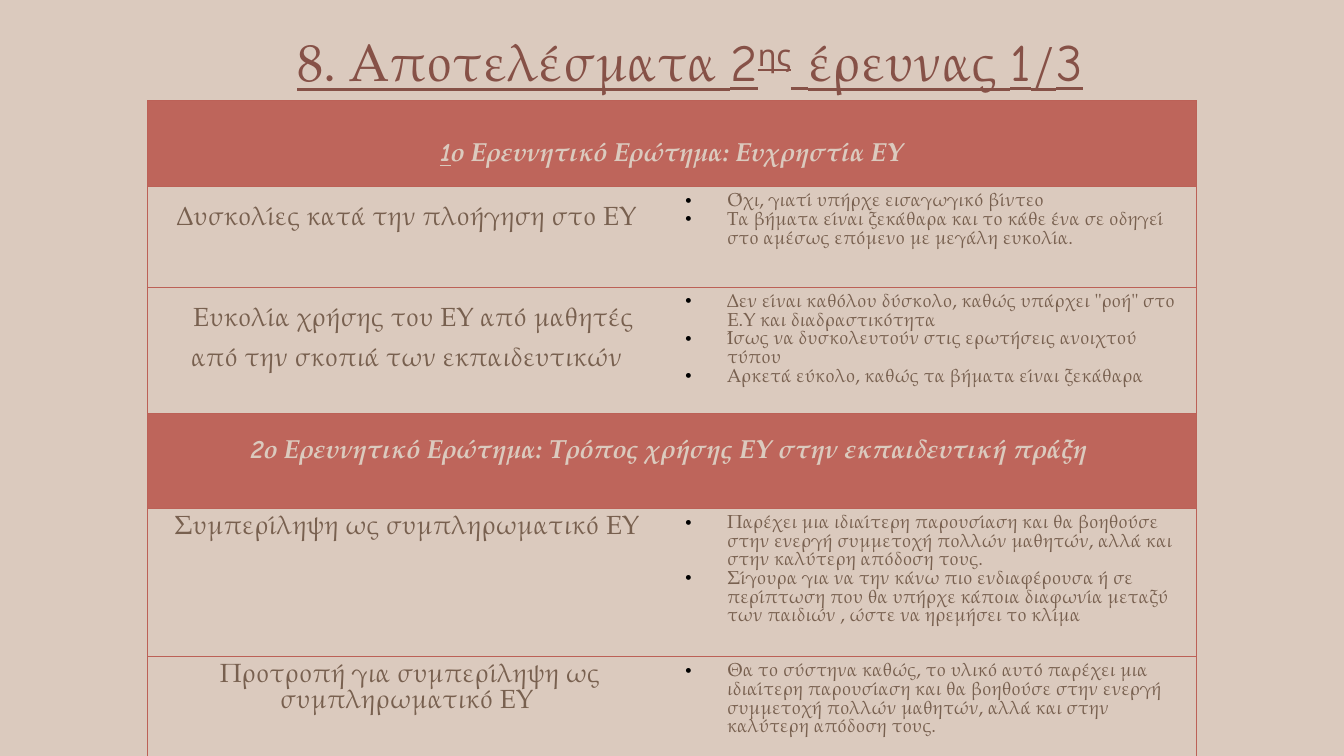
from lxml import etree
from pptx import Presentation
from pptx.dml.color import RGBColor
from pptx.enum import text
from pptx.oxml.ns import qn
from pptx.util import Inches, Pt

SAND = RGBColor(0xDB, 0xCA, 0xBE)
WINE = RGBColor(0x86, 0x51, 0x47)
BROWN = RGBColor(0x78, 0x60, 0x4F)
BRICK = RGBColor(0xBE, 0x65, 0x5B)
EDGE = RGBColor(0xBC, 0x61, 0x57)
BLACK = RGBColor(0, 0, 0)
SERIF = "TeX Gyre Pagella"
COMIC = "Comic Neue"


def add_run(para, words, size, color, face=SERIF, bold=False, line=False):
    """Add a run; bold runs are italic too."""
    run = para.add_run()
    run.text = words
    font = run.font
    font.size, font.name = Pt(size), face
    font.bold = font.italic = bold
    font.underline = line
    font.color.rgb = color
    return run


def set_edges(cell, shown):
    """Draw the cell sides named in shown (L, R, T, B) and clear the rest."""
    props = cell._tc.get_or_add_tcPr()
    for side in "LRTB":
        line = etree.SubElement(props, qn(f"a:ln{side}"), w=str(Pt(0.75)))
        if side in shown:
            paint = etree.SubElement(line, qn("a:solidFill"))
            etree.SubElement(paint, qn("a:srgbClr"), val=str(EDGE))
        else:
            etree.SubElement(line, qn("a:noFill"))


deck = Presentation()
deck.slide_width = Inches(10)
deck.slide_height = deck.slide_width * 9 // 16
slide = deck.slides.add_slide(deck.slide_layouts[6])
slide.background.fill.solid()
slide.background.fill.fore_color.rgb = SAND

# Title
box = slide.shapes.add_textbox(Inches(1.98), Inches(0.17), Inches(6.31), Inches(0.57))
box.text_frame.word_wrap = True
box.text_frame.auto_size = text.MSO_AUTO_SIZE.SHAPE_TO_FIT_TEXT
para = box.text_frame.paragraphs[0]
para.alignment = text.PP_ALIGN.CENTER
title = [("8. Αποτελέσματα ", SERIF), ("2", COMIC), ("ης", COMIC), (" ", COMIC),
         ("έρευνας ", SERIF), ("1", COMIC), ("/", SERIF), ("3", COMIC)]
for words, face in title:
    run = add_run(para, words, 28, WINE, face, line=True)
    if words == "ης":
        run._r.get_or_add_rPr().set("baseline", "30000")

# Each row: height, line spacing, then a numbered heading or a topic with answers
rows = [
    (0.64, 2, "1", "ο Ερευνητικό Ερώτημα: Ευχρηστία ΕΥ"),
    (0.75, 1.5, "Δυσκολίες κατά την πλοήγηση στο ΕΥ ", [
        "Όχι, γιατί υπήρχε εισαγωγικό βίντεο",
        "Τα βήματα είναι ξεκάθαρα και το κάθε ένα σε οδηγεί στο αμέσως επόμενο "
        "με μεγάλη ευκολία."]),
    (0.93, 1.5, " Ευκολία χρήσης του ΕΥ από μαθητές από την σκοπιά των εκπαιδευτικών ", [
        'Δεν είναι καθόλου δύσκολο, καθώς υπάρχει "ροή" στο Ε.Υ και διαδραστικότητα',
        "Ίσως να δυσκολευτούν στις ερωτήσεις ανοιχτού τύπου",
        "Αρκετά εύκολο, καθώς τα βήματα είναι ξεκάθαρα"]),
    (0.71, 1.5, "2", "ο Ερευνητικό Ερώτημα: Τρόπος χρήσης ΕΥ στην εκπαιδευτική πράξη "),
    (1.1, 1, "Συμπερίληψη ως συμπληρωματικό ΕΥ ", [
        "Παρέχει μια ιδιαίτερη παρουσίαση και θα βοηθούσε στην ενεργή συμμετοχή "
        "πολλών μαθητών, αλλά και στην καλύτερη απόδοση τους.",
        "Σίγουρα για να την κάνω πιο ενδιαφέρουσα ή σε περίπτωση που θα υπήρχε "
        "κάποια διαφωνία μεταξύ των παιδιών , ώστε να ηρεμήσει το κλίμα"]),
    (0.75, 1, "Προτροπή για συμπερίληψη ως συμπληρωματικό ΕΥ ", [
        "Θα το σύστηνα καθώς, το υλικό αυτό παρέχει μια ιδιαίτερη παρουσίαση και "
        "θα βοηθούσε στην ενεργή συμμετοχή πολλών μαθητών, αλλά και στην καλύτερη "
        "απόδοση τους."]),
]
high = sum(row[0] for row in rows)
table = slide.shapes.add_table(len(rows), 2, Inches(1.1), Inches(0.75),
                               Inches(7.8), Inches(high)).table
for col in table.columns:
    col.width = Inches(3.9)

for i, (tall, gap, lead, rest) in enumerate(rows):
    table.rows[i].height = Inches(tall)
    left, right = table.cell(i, 0), table.cell(i, 1)
    head = isinstance(rest, str)
    if head:
        left.merge(right)
    set_edges(left, "LRTB" if head else "LTB")
    set_edges(right, "RTB")
    for cell in (left, right):
        if head:
            cell.fill.solid()
            cell.fill.fore_color.rgb = BRICK
        else:
            cell.fill.background()

    para = left.text_frame.paragraphs[0]
    para.alignment = text.PP_ALIGN.CENTER
    para.line_spacing = float(gap)
    if head:
        add_run(para, lead, 14, SAND, COMIC, bold=True, line=i == 0)
        add_run(para, rest, 14, SAND, bold=True)
        continue
    add_run(para, lead, 14, BROWN)

    frame = right.text_frame
    for j, words in enumerate(rest):
        para = frame.add_paragraph() if j else frame.paragraphs[0]
        props = para._p.get_or_add_pPr()
        props.set("marL", str(Inches(0.31)))
        props.set("indent", str(Inches(-0.31)))
        tint = etree.SubElement(props, qn("a:buClr"))
        etree.SubElement(tint, qn("a:srgbClr"), val=str(BLACK))
        etree.SubElement(props, qn("a:buChar"), char="•")
        add_run(para, words, 10, BROWN)

deck.save("out.pptx")
